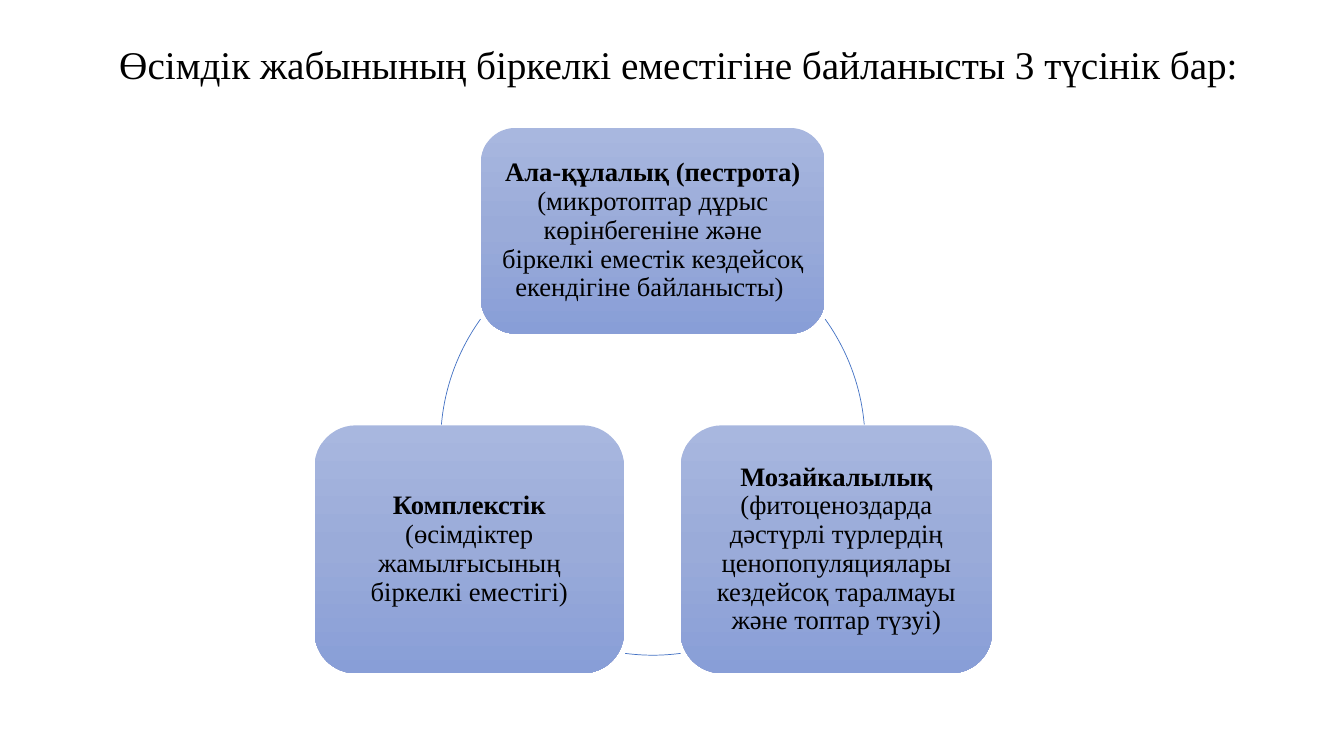
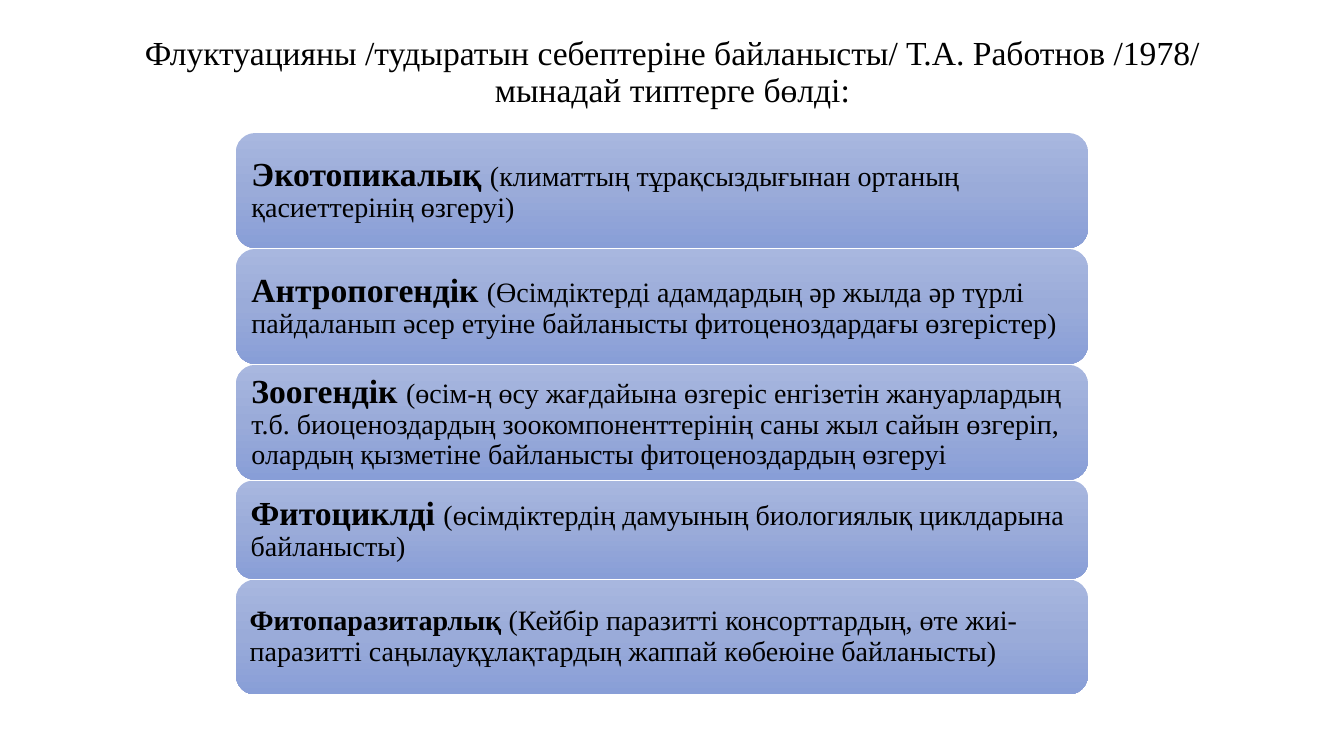
"""Build two slides on the unevenness and fluctuation of plant cover."""
from copy import deepcopy

from pptx import Presentation
from pptx.dml.color import RGBColor
from pptx.enum.shapes import MSO_SHAPE
from pptx.enum.text import MSO_ANCHOR, PP_ALIGN
from pptx.oxml.ns import qn
from pptx.util import Emu, Pt

ROUNDED = MSO_SHAPE.ROUNDED_RECTANGLE
ARC = MSO_SHAPE.ARC
MIDDLE = MSO_ANCHOR.MIDDLE
CENTER = PP_ALIGN.CENTER
LEFT = PP_ALIGN.LEFT

EMU_PER_PX = 9144
BLACK = RGBColor(0x00, 0x00, 0x00)
RING_BLUE = RGBColor(0x44, 0x72, 0xC4)
CARD_SHADES = (
    RGBColor(0xA8, 0xB7, 0xDF),
    RGBColor(0x9A, 0xAB, 0xD9),
    RGBColor(0x88, 0x9E, 0xD7),
)


def px(length):
    return Emu(length * EMU_PER_PX)


class Deck:
    font = "Times New Roman"
    line_spacing = 0.9

    def __init__(self, width, height):
        self.presentation = Presentation()
        self.presentation.slide_width = px(width)
        self.presentation.slide_height = px(height)
        self.slide = None

    def new_slide(self):
        blank = self.presentation.slide_layouts[6]
        self.slide = self.presentation.slides.add_slide(blank)

    def add_text(self, frame, runs, align):
        frame.word_wrap = True
        frame.vertical_anchor = MIDDLE
        paragraph = frame.paragraphs[0]
        paragraph.alignment = align
        paragraph.line_spacing = self.line_spacing
        for words, size, bold in runs:
            run = paragraph.add_run()
            run.text = words
            run.font.name = self.font
            run.font.size = Pt(size)
            run.font.bold = bold
            run.font.color.rgb = BLACK

    def title(self, left, top, words, size):
        box = self.slide.shapes.add_textbox(px(left), px(top), px(1150), px(145))
        self.add_text(box.text_frame, [(words, size, False)], CENTER)

    def card(self, left, top, width, height, runs, inset, align):
        card = self.slide.shapes.add_shape(
            ROUNDED, px(left), px(top), px(width), px(height))
        card.shadow.inherit = False
        card.line.fill.background()
        card.fill.gradient()
        card.fill.gradient_angle = 270
        stops = next(card.element.iter(qn("a:gsLst")))
        stops.insert(1, deepcopy(stops[0]))
        for index, (stop, shade) in enumerate(zip(card.fill.gradient_stops, CARD_SHADES)):
            stop.position = index / 2
            stop.color.rgb = shade
        frame = card.text_frame
        frame.margin_left = frame.margin_right = px(inset)
        frame.margin_top = frame.margin_bottom = px(inset)
        self.add_text(frame, runs, align)

    def arc(self, left, top, diameter, start, end):
        arc = self.slide.shapes.add_shape(
            ARC, px(left), px(top), px(diameter), px(diameter))
        arc.shadow.inherit = False
        arc.fill.background()
        arc.line.color.rgb = RING_BLUE
        arc.line.width = Pt(0.5)
        for index, degrees in enumerate((start, end)):
            arc.adjustments[index] = degrees * 0.6

    def save(self):
        self.presentation.save("out.pptx")


CONCEPTS = [
    (477, 127, 341, 204, "Ала-құлалық (пестрота) ",
     "(микротоптар дұрыс көрінбегеніне және біркелкі еместік кездейсоқ "
     "екендігіне байланысты) "),
    (675, 422, 309, 246, "Мозайкалылық",
     " (фитоценоздарда дәстүрлі түрлердің ценопопуляциялары кездейсоқ "
     "таралмауы және топтар түзуі)"),
    (312, 422, 307, 246, "Комплекстік ",
     "(өсімдіктер жамылғысының біркелкі еместігі)"),
]
RING_ARCS = [(324.3, 355), (82.5, 97.5), (185, 215.7)]

FLUCTUATIONS = [
    (114, 10, 24, "Экотопикалық ",
     "(климаттың тұрақсыздығынан ортаның қасиеттерінің өзгеруі)"),
    (114, 10, 24, "Антропогендік ",
     "(Өсімдіктерді адамдардың әр жылда әр түрлі пайдаланып әсер етуіне "
     "байланысты фитоценоздардағы өзгерістер)"),
    (114, 10, 24, "Зоогендік ",
     "(өсім-ң өсу жағдайына өзгеріс енгізетін жануарлардың т.б. "
     "биоценоздардың зоокомпоненттерінің саны жыл сайын өзгеріп, олардың "
     "қызметіне байланысты фитоценоздардың өзгеруі"),
    (97, 10, 24, "Фитоциклді ",
     "(өсімдіктердің дамуының биологиялық циклдарына байланысты)"),
    (114, 8, 20, "Фитопаразитарлық ",
     "(Кейбір паразитті консорттардың, өте жиі-паразитті "
     "саңылауқұлақтардың жаппай көбеюіне байланысты)"),
]


def concepts_slide(deck):
    deck.new_slide()
    deck.title(98, -6, "Өсімдік жабынының біркелкі еместігіне байланысты 3 түсінік бар:", 28)
    for left, top, width, height, term, meaning in CONCEPTS:
        runs = [(term, 19, True), (meaning, 19, False)]
        deck.card(left, top, width, height, runs, 8, CENTER)
    for start, end in RING_ARCS:
        deck.arc(437, 229, 421, start, end)


def fluctuations_slide(deck):
    deck.new_slide()
    deck.title(92, 0, "Флуктуацияны /тудыратын себептеріне байланысты/ Т.А. Работнов "
               "/1978/ мынадай типтерге бөлді:", 24)
    top, gap = 132, 1
    for height, inset, term_size, term, cause in FLUCTUATIONS:
        runs = [(term, term_size, True), (cause, 20, False)]
        deck.card(234, top, 845, height, runs, inset, LEFT)
        top += height + gap


def main():
    deck = Deck(1333, 750)
    concepts_slide(deck)
    fluctuations_slide(deck)
    deck.save()


if __name__ == "__main__":
    main()
